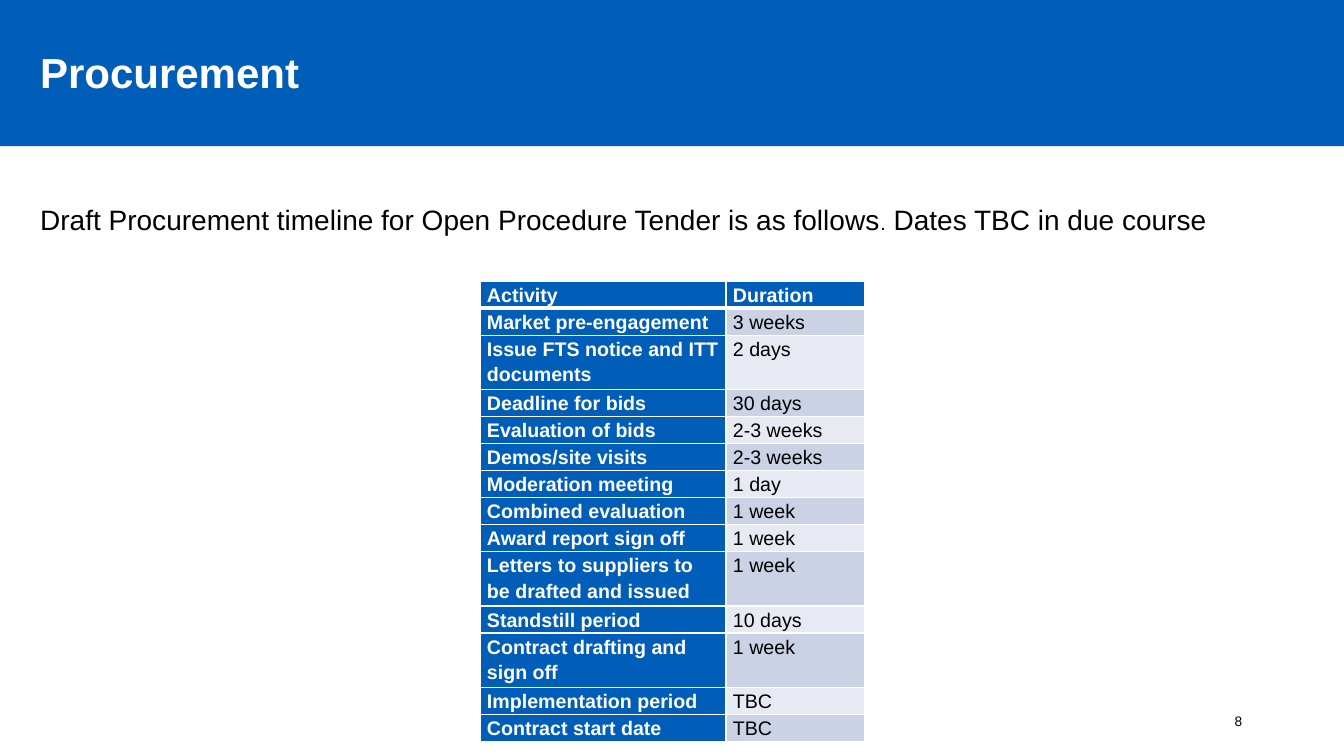
from lxml import etree
from pptx import Presentation
from pptx.dml.color import RGBColor
from pptx.enum.shapes import MSO_SHAPE
from pptx.enum.text import MSO_ANCHOR, PP_ALIGN
from pptx.oxml.ns import qn
from pptx.util import Inches, Pt

RECT = MSO_SHAPE.RECTANGLE
TOP, MIDDLE = MSO_ANCHOR.TOP, MSO_ANCHOR.MIDDLE
LEFT, RIGHT = PP_ALIGN.LEFT, PP_ALIGN.RIGHT

FONT = "Arial"
BLUE, WHITE, BLACK = "005EB8", "FFFFFF", "000000"
BANDS = ("CCD2E6", "E7EAF3")

TIMELINE = [
    ("Activity", "Duration"),
    ("Market pre-engagement", "3 weeks"),
    ("Issue FTS notice and ITT documents", "2 days"),
    ("Deadline for bids", "30 days"),
    ("Evaluation of bids", "2-3 weeks"),
    ("Demos/site visits", "2-3 weeks"),
    ("Moderation meeting", "1 day"),
    ("Combined evaluation", "1 week"),
    ("Award report sign off", "1 week"),
    ("Letters to suppliers to be drafted and issued", "1 week"),
    ("Standstill period", "10 days"),
    ("Contract drafting and sign off", "1 week"),
    ("Implementation period", "TBC"),
    ("Contract start date", "TBC"),
]
COL_WIDTHS = (2.44, 1.38)
ROW_HEIGHT = 0.21


def rgb(value):
    return RGBColor.from_string(value)


def style_run(r, size, color, bold=False):
    r.font.name = FONT
    r.font.size = Pt(size)
    r.font.bold = bold
    r.font.color.rgb = rgb(color)


def add_banner(slide, x, y, w, h):
    sp = slide.shapes.add_shape(RECT, Inches(x), Inches(y), Inches(w), Inches(h))
    sp.shadow.inherit = False
    sp.fill.solid()
    sp.fill.fore_color.rgb = rgb(BLUE)
    sp.line.fill.background()


def add_text(slide, x, y, w, h, runs, color=BLACK, bold=False,
             anchor=TOP, align=LEFT, spacing=1.0):
    tf = slide.shapes.add_textbox(Inches(x), Inches(y), Inches(w), Inches(h)).text_frame
    tf.word_wrap = True
    tf.vertical_anchor = anchor
    p = tf.paragraphs[0]
    p.alignment = align
    p.line_spacing = spacing
    for text, size in runs:
        r = p.add_run()
        r.text = text
        style_run(r, size, color, bold)


def set_borders(cell, bottom):
    tc_pr = cell._tc.get_or_add_tcPr()
    for side, width in (("L", 1), ("R", 1), ("T", 1), ("B", bottom)):
        ln = etree.SubElement(tc_pr, qn(f"a:ln{side}"), w=str(Pt(width)))
        fill = etree.SubElement(ln, qn("a:solidFill"))
        etree.SubElement(fill, qn("a:srgbClr"), val=WHITE)


def fill_cell(cell, text, fill, color, bold, bottom):
    cell.margin_left = cell.margin_right = Inches(0.07)
    cell.margin_top = cell.margin_bottom = 0
    set_borders(cell, bottom)
    cell.fill.solid()
    cell.fill.fore_color.rgb = rgb(fill)
    p = cell.text_frame.paragraphs[0]
    p.text = text
    p.line_spacing = 1.15
    style_run(p.runs[0], 14, color, bold)


def add_timeline(slide, x, y):
    table = slide.shapes.add_table(
        len(TIMELINE), len(COL_WIDTHS), Inches(x), Inches(y),
        Inches(sum(COL_WIDTHS)), Inches(ROW_HEIGHT * len(TIMELINE))).table
    for column, width in zip(table.columns, COL_WIDTHS):
        column.width = Inches(width)
    for i, texts in enumerate(TIMELINE):
        table.rows[i].height = Inches(ROW_HEIGHT)
        for j, text in enumerate(texts):
            heading = i == 0 or j == 0
            fill = BLUE if heading else BANDS[(i - 1) % 2]
            fill_cell(table.cell(i, j), text, fill, WHITE if heading else BLACK,
                      heading, 3 if i == 0 else 1)


def main():
    prs = Presentation()
    prs.slide_width, prs.slide_height = Inches(13.33), Inches(7.5)
    slide = prs.slides.add_slide(prs.slide_layouts[6])
    add_banner(slide, 0, 0, 13.33, 1.45)
    add_text(slide, 0.3, 0.02, 10.63, 1.45, [("Procurement", 30)],
             color=WHITE, bold=True, anchor=MIDDLE, spacing=0.9)
    add_text(slide, 0.3, 1.89, 12.07, 4.87, [
        ("Draft Procurement timeline for Open Procedure Tender is as follows", 20),
        (".", 14),
        (" Dates TBC in due course", 20),
    ], spacing=1.2)
    add_text(slide, 9.42, 6.95, 3, 0.4, [("8", 9.8)], anchor=MIDDLE, align=RIGHT)
    add_timeline(slide, 4.76, 2.79)
    prs.save("out.pptx")


if __name__ == "__main__":
    main()
